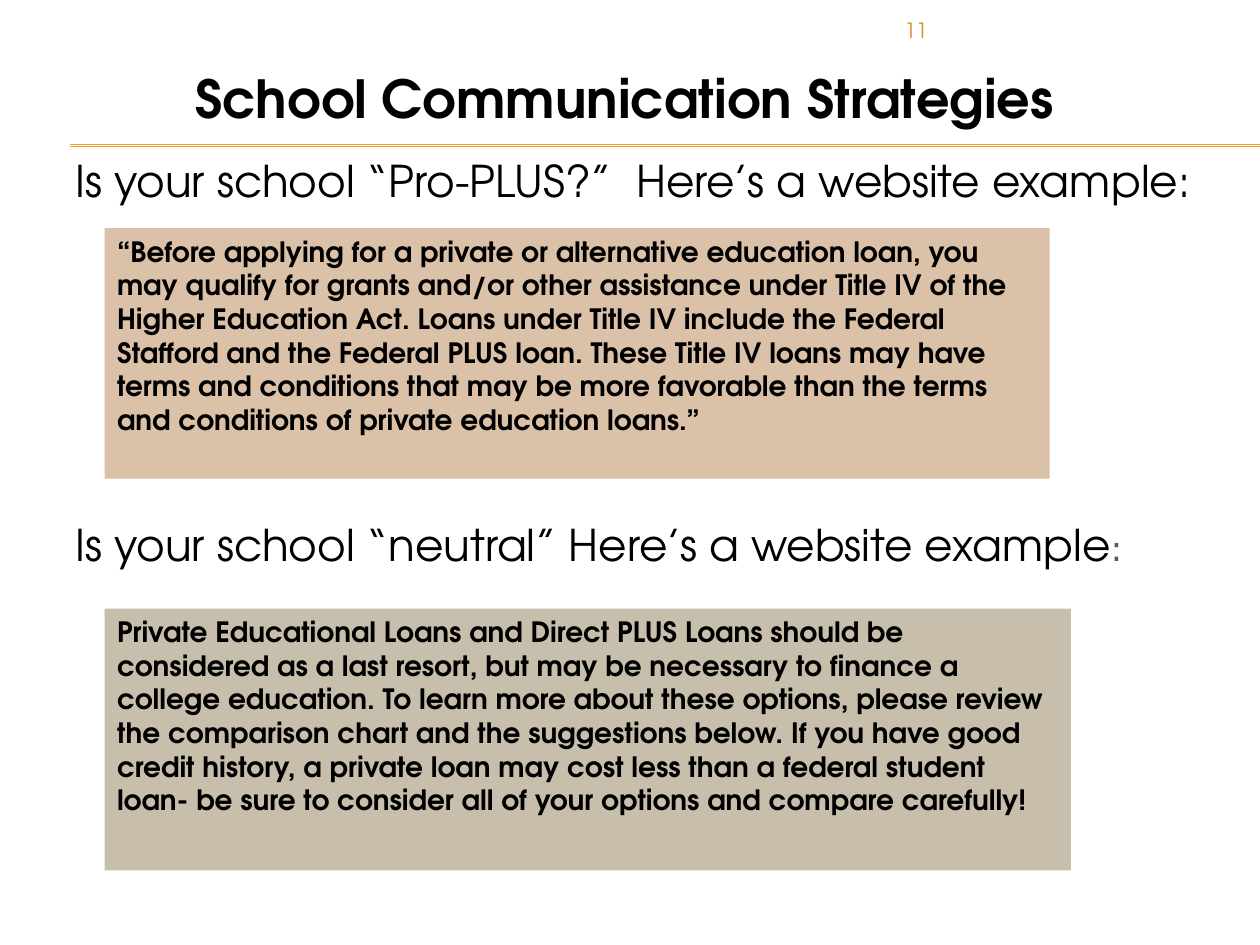
from dataclasses import dataclass

import pptx
import pptx.dml.color
import pptx.enum.shapes
import pptx.enum.text
import pptx.oxml.ns
import pptx.util
from lxml import etree
from pptx.util import Cm

ALIGN = pptx.enum.text.PP_ALIGN
ANCHOR = pptx.enum.text.MSO_ANCHOR
FACE = "TeX Gyre Adventor"
HEAD = {"size": 25}
QUOTE = {"size": 16, "bold": True}


@dataclass
class Run:
    text: str
    form: dict
    color: str = "000000"


@dataclass
class Block:
    left: float
    top: float
    width: float
    height: float
    runs: list[Run]
    fill: str | None = None
    align: ALIGN = ALIGN.LEFT
    anchor: ANCHOR = ANCHOR.TOP


BLOCKS = [
    Block(17.98, 0.2, 6.99, 0.81, [Run("11", {"size": 12}, "D48F29")],
          anchor=ANCHOR.MIDDLE),
    Block(1.27, 2.97, 23.93, 1.52,
          [Run("Is your school “Pro-PLUS?”  Here’s a website example:", HEAD)]),
    Block(2.11, 4.6, 19.05, 5.05, [Run(
        "“Before applying for a private or alternative education loan, you may "
        "qualify for grants and/or other assistance under Title IV of the Higher "
        "Education Act. Loans under Title IV include the Federal Stafford and the "
        "Federal PLUS loan. These Title IV loans may have terms and conditions "
        "that may be more favorable than the terms and conditions of private "
        "education loans.”", QUOTE)], fill="DBC1A7"),
    Block(1.27, 10.31, 23.93, 1.52, [
        Run("Is your school “neutral” Here’s a website example", HEAD),
        Run(":", {"size": 20, "name": "DejaVu Sans"}, "595959")]),
    Block(2.11, 12.27, 19.48, 5.28, [Run(
        "Private Educational Loans and Direct PLUS Loans should be considered as "
        "a last resort, but may be necessary to finance a college education. To "
        "learn more about these options, please review the comparison chart and "
        "the suggestions below. If you have good credit history, a private loan "
        "may cost less than a federal student loan- be sure to consider all of "
        "your options and compare carefully!", QUOTE)], fill="C7BFAC"),
    Block(0.84, 1.19, 23.5, 1.55,
          [Run("School Communication Strategies", {"size": 30, "bold": True})],
          align=ALIGN.CENTER, anchor=ANCHOR.MIDDLE),
]


def paint(part, color: str) -> None:
    """Give a fill, or the fill of a line, one solid colour."""
    part.solid()
    part.fore_color.rgb = pptx.dml.color.RGBColor.from_string(color)


def draw_rule(slide, top: float) -> None:
    rule = slide.shapes.add_connector(
        pptx.enum.shapes.MSO_CONNECTOR.STRAIGHT,
        Cm(1.42), Cm(top), Cm(25.4), Cm(top))
    rule.line.width = pptx.util.Pt(0.75)
    paint(rule.line.fill, "F0A22E")
    etree.SubElement(rule._element.spPr, pptx.oxml.ns.qn("a:effectLst"))


def draw_block(slide, block: Block) -> None:
    area = [Cm(n) for n in (block.left, block.top, block.width, block.height)]
    if block.fill:
        shape = slide.shapes.add_shape(
            pptx.enum.shapes.MSO_SHAPE.RECTANGLE, *area)
        shape.shadow.inherit = False
        shape.line.fill.background()
        paint(shape.fill, block.fill)
    else:
        shape = slide.shapes.add_textbox(*area)
    frame = shape.text_frame
    frame.word_wrap = True
    frame.vertical_anchor = block.anchor
    para = frame.paragraphs[0]
    para.alignment = block.align
    for item in block.runs:
        run = para.add_run()
        run.text = item.text
        form = {"name": FACE, "bold": False} | item.form
        form["size"] = pptx.util.Pt(form["size"])
        for key, value in form.items():
            setattr(run.font, key, value)
        paint(run.font.fill, item.color)


def main() -> None:
    deck = pptx.Presentation()
    deck.slide_width, deck.slide_height = Cm(25.4), Cm(19.05)
    slide = deck.slides.add_slide(deck.slide_layouts[6])
    for top in (2.92, 2.95):
        draw_rule(slide, top)
    for block in BLOCKS:
        draw_block(slide, block)
    deck.save("out.pptx")


if __name__ == "__main__":
    main()
